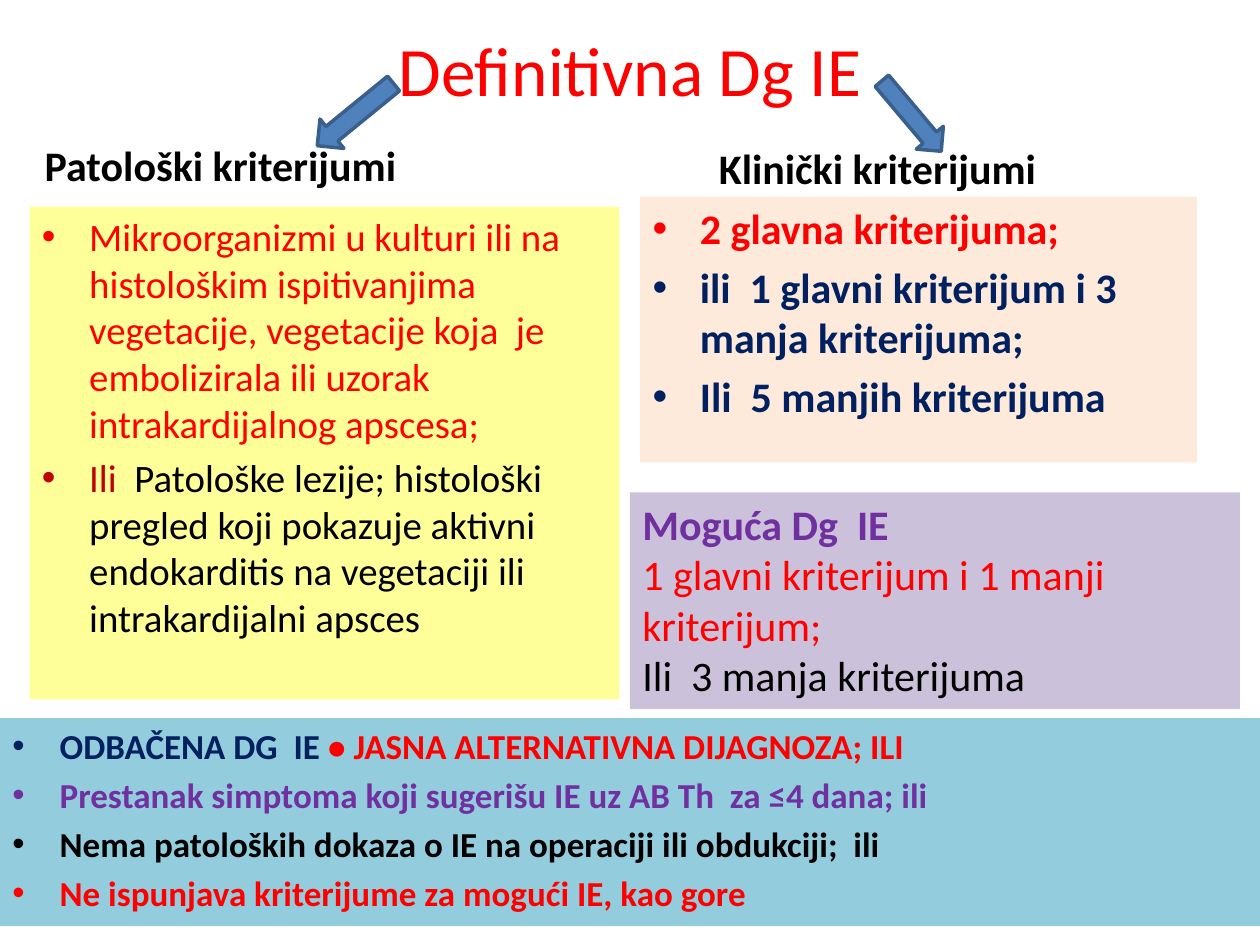
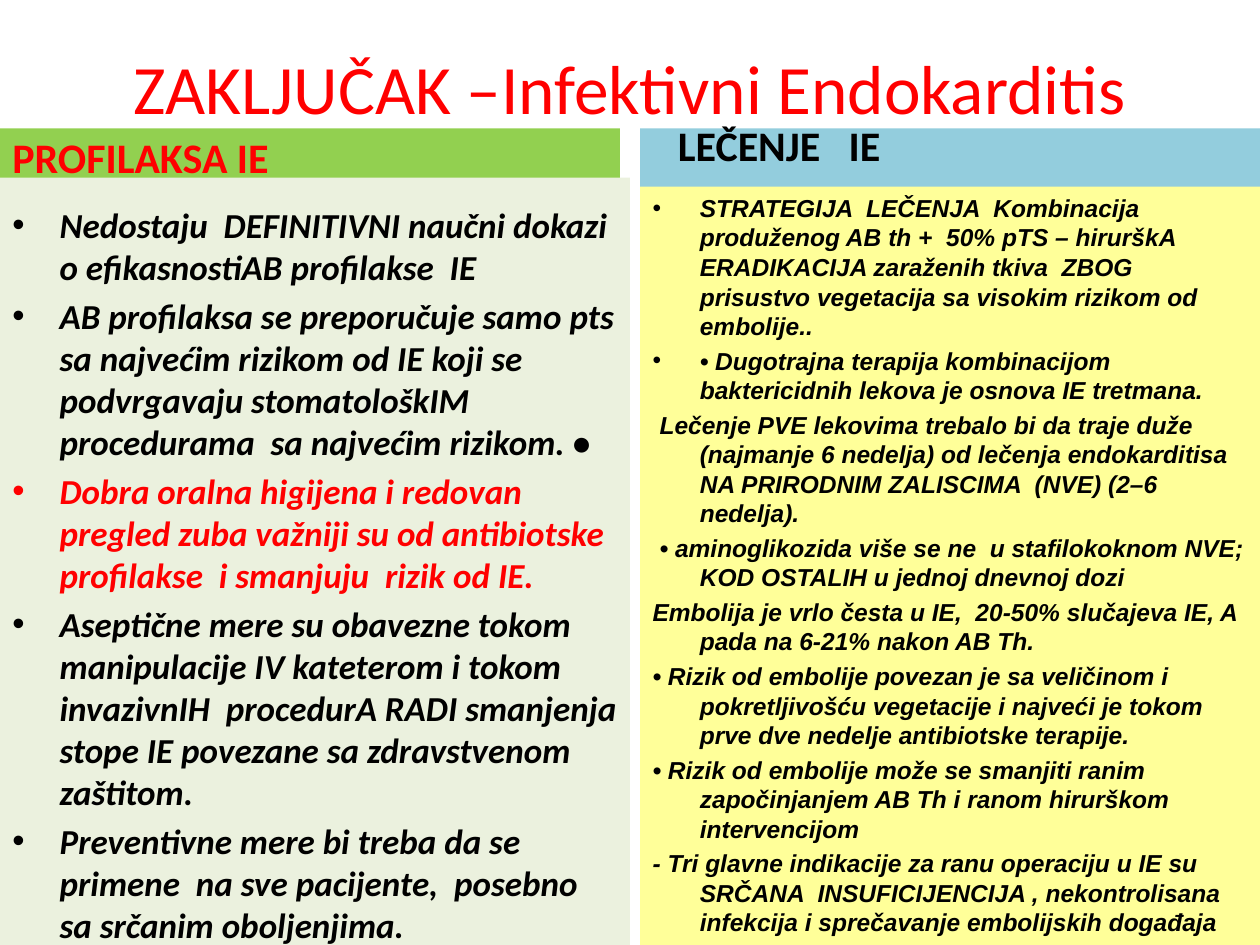
from lxml import etree
from pptx import Presentation
from pptx.dml.color import RGBColor
from pptx.enum import shapes, text
from pptx.oxml.ns import qn
from pptx.util import Pt

RED, BLACK, NAVY, PURPLE = "FF0000", "000000", "002060", "7030A0"
YELLOW, AQUA, BLUE, EDGE = "FFFF99", "93CDDD", "4F81BD", "3A5F8C"
HANG = 27
TOP, MID, LOW = (text.MSO_ANCHOR.TOP, text.MSO_ANCHOR.MIDDLE,
                 text.MSO_ANCHOR.BOTTOM)


def color(code):
    return RGBColor.from_string(code)


def panel(slide, place, fill=None, anchor=TOP, left=7.2, top=3.6, low=3.6):
    box = slide.shapes.add_textbox(*map(Pt, place))
    if fill:
        box.fill.solid()
        box.fill.fore_color.rgb = color(fill)
    frame = box.text_frame
    frame.word_wrap = True
    frame.vertical_anchor = anchor
    frame.margin_left, frame.margin_top = Pt(left), Pt(top)
    frame.margin_bottom = Pt(low)
    return frame


def style(run, size, tint, bold=False, italic=False, face="Calibri"):
    font = run.font
    font.name, font.size = face, Pt(size)
    font.bold, font.italic = bold, italic
    font.color.rgb = color(tint)


def indent(par, first, bullet):
    props = par._p.get_or_add_pPr()
    props.set("marL", str(Pt(HANG)))
    props.set("indent", str(Pt(first - HANG)))
    if bullet:
        etree.SubElement(props, qn("a:buFont")).set("typeface", "Arial")
        etree.SubElement(props, qn("a:buChar")).set("char", "•")
    else:
        etree.SubElement(props, qn("a:buNone"))


def write(frame, index, parts, size, **look):
    par = frame.add_paragraph() if index else frame.paragraphs[0]
    for words, tint in parts:
        start = len(par.runs)
        if start:
            par.add_run().text = words
        else:
            par.text = words
        for run in par.runs[start:]:
            style(run, size, tint, **look)
    return par


def title(slide, words, top):
    frame = panel(slide, (36, top, 648, 56), anchor=MID)
    par = write(frame, 0, [(words, RED)], 39.6)
    par.alignment = text.PP_ALIGN.CENTER


def heading(slide, words, place, tint=BLACK, fill=None, **edges):
    frame = panel(slide, place, fill, LOW, **edges)
    write(frame, 0, [(words, tint)], 24, bold=True)


def bullets(frame, items, size, **look):
    for index, parts in enumerate(items):
        par = write(frame, index, parts, size, **look)
        indent(par, 0, True)
        if index:
            par.space_before = Pt(size * 0.2)


def arrow(slide, place, angle):
    shape = slide.shapes.add_shape(shapes.MSO_SHAPE.RIGHT_ARROW,
                                   *map(Pt, place))
    shape.rotation = angle
    shape.shadow.inherit = False
    shape.fill.solid()
    shape.fill.fore_color.rgb = color(BLUE)
    shape.line.color.rgb = color(EDGE)
    shape.line.width = Pt(2)


def criteria(slide):
    title(slide, "Definitivna Dg IE", 11.5)
    heading(slide, "Patološki kriterijumi", (18.4, 62, 336, 50.3))
    bullets(panel(slide, (16.9, 118.1, 337, 281.5), YELLOW), [
        [("Mikroorganizmi u kulturi ili na histološkim ispitivanjima  "
          "vegetacije, vegetacije koja  je  embolizirala ili uzorak "
          "intrakardijalnog apscesa;", RED)],
        [("Ili ", "C00000"),
         (" Patološke lezije; histološki pregled koji pokazuje aktivni "
          "endokarditis na vegetaciji ili intrakardijalni apsces", BLACK)],
    ], 22.2)
    heading(slide, "Klinički kriterijumi", (403.7, 68, 280, 46))
    bullets(panel(slide, (365.8, 112.3, 318.2, 151.9), "FDEADA"), [
        [("2 glavna kriterijuma;", RED)],
        [("ili  1 glavni kriterijum i 3 manja kriterijuma;", NAVY)],
        [("Ili  5 manjih kriterijuma", NAVY)],
    ], 24, bold=True)
    bullets(panel(slide, (0, 410.4, 720, 118.8), AQUA), [
        [("ODBAČENA DG  IE ", NAVY),
         ("• JASNA ALTERNATIVNA DIJAGNOZA; ILI", RED)],
        [("Prestanak simptoma koji sugerišu IE uz AB Th  za ≤4 dana; ili",
          PURPLE)],
        [("Nema patoloških dokaza o IE na operaciji ili obdukciji;  ili",
          BLACK)],
        [("Ne ispunjava kriterijume za mogući IE, kao gore", RED)],
    ], 20, bold=True)
    frame = panel(slide, (360, 281.3, 348.5, 123.8), "CCC1DA")
    lines = [("Moguća Dg  IE", PURPLE),
             ("1 glavni kriterijum i 1 manji kriterijum;", RED),
             ("Ili  3 manja kriterijuma", BLACK)]
    for index, line in enumerate(lines):
        write(frame, index, [line], 24, bold=index == 0)
    arrow(slide, (175, 54.7, 56.2, 21.6), 140.8)
    arrow(slide, (494.6, 56.2, 52.6, 20.2), 49.9)


def closing(slide):
    title(slide, "ZAKLJUČAK –Infektivni Endokarditis", 21.6)
    heading(slide, "PROFILAKSA IE", (0, 73.4, 354.2, 33.9), RED, "92D050")
    frame = panel(slide, (0, 101.5, 360, 438.5), "EBF1DE", top=14.5)
    bullets(frame, [
        [("Nedostaju  DEFINITIVNI naučni dokazi o efikasnostiAB profilakse  "
          "IE", BLACK)],
        [("AB profilaksa se preporučuje samo pts sa najvećim rizikom od IE "
          "koji se podvrgavaju stomatološkIM procedurama  sa najvećim "
          "rizikom. •", BLACK)],
        [("Dobra oralna higijena i redovan pregled zuba važniji su od "
          "antibiotske profilakse  i smanjuju  rizik od IE.", RED)],
        [("Aseptične mere su obavezne tokom manipulacije IV kateterom i "
          "tokom invazivnIH  procedurA RADI smanjenja stope IE povezane sa "
          "zdravstvenom zaštitom.", BLACK)],
        [("Preventivne mere bi treba da se\vprimene  na sve pacijente,  "
          "posebno sa srčanim oboljenjima.", BLACK)],
    ], 20, bold=True, italic=True)
    heading(slide, "LEČENJE   IE", (365.8, 73.4, 354.2, 33.9), BLACK, AQUA,
            left=21.6, top=0, low=10)
    frame = panel(slide, (365.8, 106.6, 354.2, 433.4), YELLOW)
    notes = [
        (0, True, "STRATEGIJA  LEČENJA  Kombinacija produženog AB th +  50% "
         "pTS – hirurškA ERADIKACIJA zaraženih tkiva  ZBOG prisustvo "
         "vegetacija sa visokim rizikom od embolije.."),
        (0, True, "• Dugotrajna terapija kombinacijom baktericidnih lekova "
         "je osnova IE tretmana."),
        (4, False, "Lečenje PVE lekovima trebalo bi da traje duže (najmanje "
         "6 nedelja) od lečenja endokarditisa NA PRIRODNIM ZALISCIMA  (NVE) "
         "(2–6 nedelja)."),
        (4, False, "• aminoglikozida više se ne  u stafilokoknom NVE; KOD "
         "OSTALIH u jednoj dnevnoj dozi"),
        (0, False, "Embolija je vrlo česta u IE,  20-50% slučajeva IE, A "
         "pada na 6-21% nakon AB Th."),
        (0, False, "• Rizik od embolije povezan je sa veličinom i "
         "pokretljivošću vegetacije i najveći je tokom prve dve nedelje "
         "antibiotske terapije."),
        (0, False, "• Rizik od embolije može se smanjiti ranim "
         "započinjanjem AB Th i ranom hirurškom intervencijom"),
        (0, False, "- Tri glavne indikacije za ranu operaciju u IE su "
         "SRČANA  INSUFICIJENCIJA , nekontrolisana infekcija i sprečavanje "
         "embolijskih događaja"),
    ]
    for index, (first, bullet, words) in enumerate(notes):
        par = write(frame, index, [(words, BLACK)], 14, bold=True,
                    italic=True, face="Arial")
        indent(par, first, bullet)
        par.line_spacing = Pt(16.9)
        if index:
            par.space_before = Pt(2.8)


def main():
    deck = Presentation()
    deck.slide_width, deck.slide_height = Pt(720), Pt(540)
    for build in (criteria, closing):
        build(deck.slides.add_slide(deck.slide_layouts[6]))
    deck.save("out.pptx")


if __name__ == "__main__":
    main()
